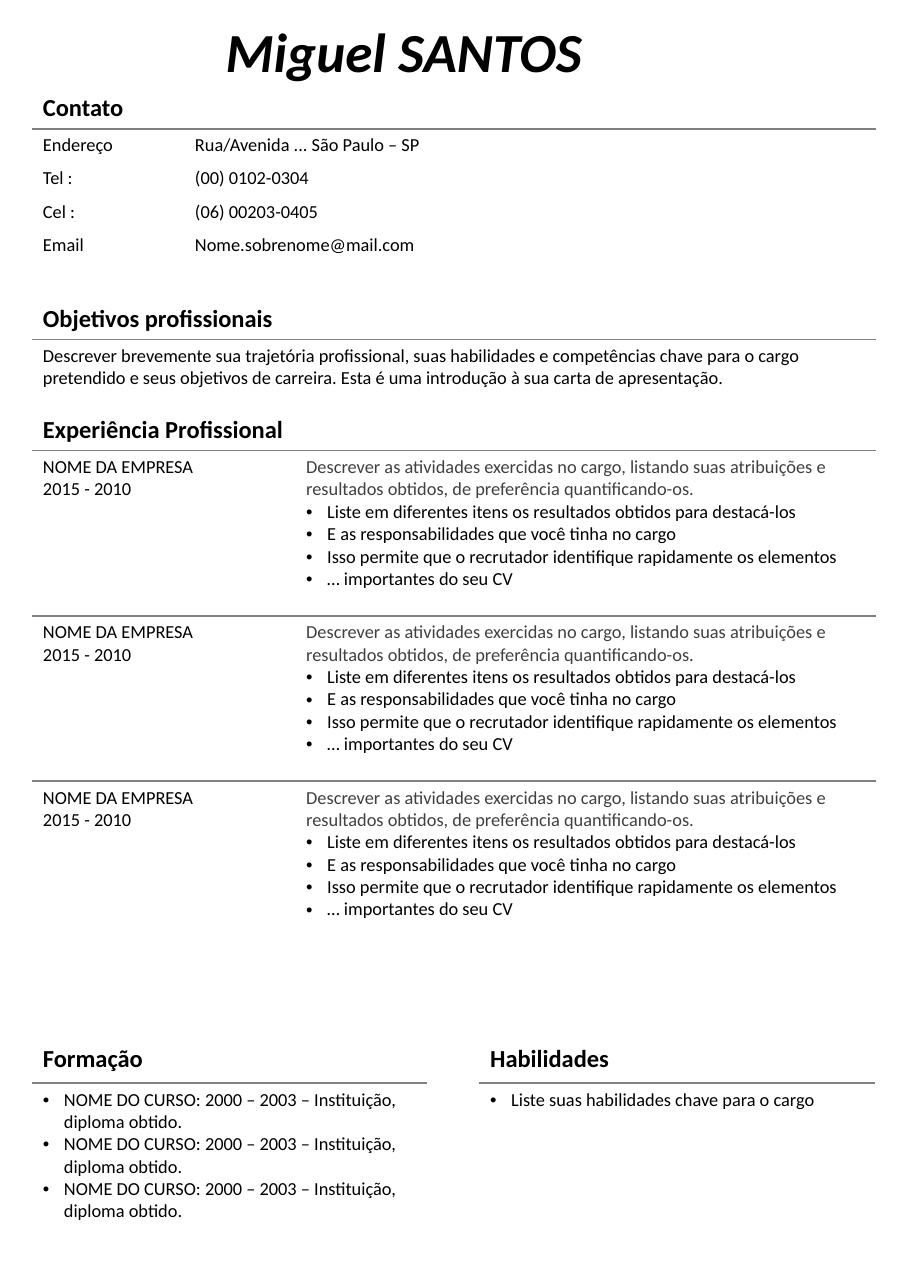
import pptx
import pptx.util
import pptx.dml.color
import pptx.oxml.ns
import lxml.etree

Inches = pptx.util.Inches
Pt = pptx.util.Pt
COLORS = {"text": "000000", "summary": "404040", "rule": "808080"}
BULLET = "• "
LEFT = 0.29
HEADER_H = 0.37
FULL_W = 7.66


class Resume:
    font = "Calibri"
    body_size = 12
    heading_size = 16
    indent = 0.19

    def __init__(self, slide):
        self.slide = slide

    def sub(self, parent, tag, **attrs):
        return lxml.etree.SubElement(parent, pptx.oxml.ns.qn(tag), **attrs)

    def run(self, p, text, size, bold=False, italic=False, color="text"):
        r = p.add_run()
        r.text = text
        r.font.name = self.font
        r.font.size = Pt(size)
        r.font.bold = bold
        r.font.italic = italic
        r.font.color.rgb = pptx.dml.color.RGBColor.from_string(COLORS[color])

    def title(self, text, left, top, width, height):
        tb = self.slide.shapes.add_textbox(
            Inches(left), Inches(top), Inches(width), Inches(height))
        tf = tb.text_frame
        tf.word_wrap = False
        self.run(tf.paragraphs[0], text, 36, bold=True, italic=True)

    def bullet(self, p):
        pPr = p._p.get_or_add_pPr()
        pPr.set("marL", str(Inches(self.indent)))
        pPr.set("indent", str(-Inches(self.indent)))
        self.sub(pPr, "a:buFont", typeface="Arial")
        self.sub(pPr, "a:buChar", char=BULLET.strip())

    def borders(self, cell, above, below):
        tcPr = cell._tc.get_or_add_tcPr()
        sides = {"a:lnL": False, "a:lnR": False, "a:lnT": above, "a:lnB": below}
        for tag, shown in sides.items():
            ln = self.sub(tcPr, tag, w=str(Pt(1)))
            if shown:
                fill = self.sub(ln, "a:solidFill")
                self.sub(fill, "a:srgbClr", val=COLORS["rule"])
            else:
                self.sub(ln, "a:noFill")
        cell.fill.background()

    def cell_text(self, cell, lines, heading):
        tf = cell.text_frame
        for i, line in enumerate(lines):
            p = tf.paragraphs[0] if i == 0 else tf.add_paragraph()
            if line.startswith(BULLET):
                self.bullet(p)
            size = self.heading_size if heading else self.body_size
            color = "summary" if line == SUMMARY else "text"
            self.run(p, line.removeprefix(BULLET), size, bold=heading, color=color)

    def section(self, left, top, cols, heights, rows, rules=(0,)):
        frame = self.slide.shapes.add_table(
            len(rows), len(cols), Inches(left), Inches(top),
            Inches(sum(cols)), Inches(sum(heights)))
        table = frame.table
        table.first_row = False
        table.horz_banding = False
        for column, width in zip(table.columns, cols):
            column.width = Inches(width)
        for i, (row, height) in enumerate(zip(rows, heights)):
            table.rows[i].height = Inches(height)
            for cell in table.rows[i].cells:
                self.borders(cell, i - 1 in rules, i in rules)
            for j, lines in enumerate(row):
                self.cell_text(table.cell(i, j), lines, heading=i == 0)
            if len(row) < len(cols):
                table.cell(i, 0).merge(table.cell(i, len(cols) - 1))


SUMMARY = ("Descrever as atividades exercidas no cargo, listando suas atribuições e "
           "resultados obtidos, de preferência quantificando-os.")
OBJECTIVE = ("Descrever brevemente sua trajetória profissional, suas habilidades e "
             "competências chave para o cargo pretendido e seus objetivos de carreira. "
             "Esta é uma introdução à sua carta de apresentação.")
CONTACTS = [
    ("Endereço", "Rua/Avenida ... São Paulo – SP"),
    ("Tel :", "(00) 0102-0304"),
    ("Cel :", "(06) 00203-0405"),
    ("Email", "Nome.sobrenome@mail.com"),
]
JOB = [
    ["NOME DA EMPRESA", "2015 - 2010"],
    [SUMMARY,
     BULLET + "Liste em diferentes itens os resultados obtidos para destacá-los",
     BULLET + "E as responsabilidades que você tinha no cargo",
     BULLET + "Isso permite que o recrutador identifique rapidamente os elementos",
     BULLET + "… importantes do seu CV"],
]
COURSE = BULLET + "NOME DO CURSO: 2000 – 2003 – Instituição, diploma obtido."
SKILL = BULLET + "Liste suas habilidades chave para o cargo"


def main():
    prs = pptx.Presentation()
    prs.slide_width = Inches(8.27)
    prs.slide_height = Inches(11.69)
    s = Resume(prs.slides.add_slide(prs.slide_layouts[6]))

    s.title("Miguel SANTOS", 1.95, 0.11, 3.47, 0.71)
    contact_rows = [[[label], [value]] for label, value in CONTACTS]
    s.section(LEFT, 0.8, [1.38, 6.28], [HEADER_H] + [0.3] * len(CONTACTS),
              [[["Contato"]]] + contact_rows)
    s.section(LEFT, 2.71, [FULL_W], [HEADER_H, 0.5],
              [[["Objetivos profissionais"]], [[OBJECTIVE]]])
    s.section(LEFT, 3.72, [2.39, 5.27], [HEADER_H, 1.5, 1.5, 1.3],
              [[["Experiência Profissional"]]] + [JOB] * 3, rules=(0, 1, 2))
    s.section(LEFT, 9.43, [1.36, 2.23], [HEADER_H, 1.3],
              [[["Formação"], [""]], [[COURSE] * 3]])
    s.section(4.35, 9.43, [1.94, 1.65], [HEADER_H, 0.3],
              [[["Habilidades"], [""]], [[SKILL]]])

    prs.save("out.pptx")


if __name__ == "__main__":
    main()
